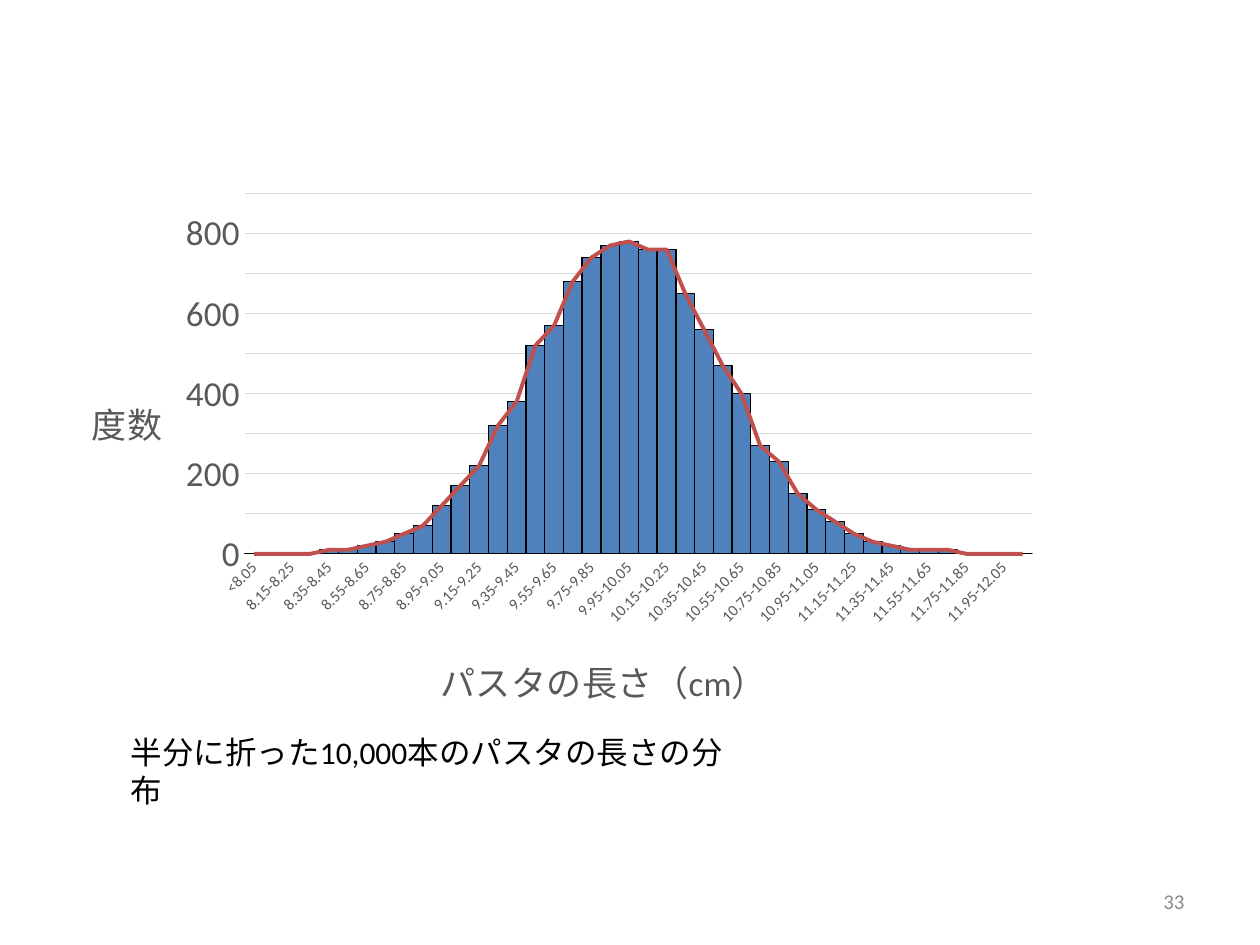
from pptx import Presentation
from pptx.chart.data import CategoryChartData
from pptx.dml.color import RGBColor
from pptx.enum.chart import XL_CHART_TYPE, XL_MARKER_STYLE, XL_TICK_MARK
from pptx.enum.text import MSO_ANCHOR, PP_ALIGN
from pptx.oxml import parse_xml
from pptx.oxml.ns import nsdecls, qn
from pptx.util import Inches, Pt

BLACK = RGBColor(0x00, 0x00, 0x00)
GRAY = RGBColor(0x59, 0x59, 0x59)
PALE = RGBColor(0xD9, 0xD9, 0xD9)
DIM = RGBColor(0x8C, 0x8C, 0x8C)
BLUE = RGBColor(0x4F, 0x81, 0xBD)
RED = RGBColor(0xC0, 0x50, 0x4D)
FACE = "Calibri"

COUNTS = [0, 0, 0, 0, 10, 10, 20, 30, 50, 70, 120, 170, 220, 320,
          380, 520, 570, 680, 740, 770, 780, 760, 760, 650, 560, 470, 400, 270,
          230, 150, 110, 80, 50, 30, 20, 10, 10, 10, 0, 0, 0, 0]


def bins():
    """Name the length classes, 0.1 cm wide, with an open class at each end."""
    edges = [f"{8.05 + i / 10:.2f}" for i in range(len(COUNTS) - 1)]
    inner = [f"{low}-{high}" for low, high in zip(edges, edges[1:])]
    return ["<" + edges[0], *inner, ">" + edges[-1]]


def style(item, **values):
    """Set each given format value on the item."""
    for name, value in values.items():
        setattr(item, name, value)


def paint(font, size, color):
    """Give a font its face, size and colour."""
    style(font, name=FACE, size=Pt(size), bold=False)
    font.color.rgb = color


def stroke(line, color, width):
    """Give a line its colour and width."""
    line.color.rgb = color
    line.width = Pt(width)


def place(node, index, box, inner=False):
    """Fix the layout of a chart part at fractions of the chart."""
    for old in node.findall(qn("c:layout")):
        node.remove(old)
    target = '<c:layoutTarget val="inner"/>' if inner else ""
    modes = '<c:xMode val="edge"/><c:yMode val="edge"/>'
    sizes = "".join(f'<c:{key} val="{value}"/>' for key, value in zip("xywh", box))
    node.insert(index, parse_xml(
        f'<c:layout {nsdecls("c")}><c:manualLayout>{target}{modes}{sizes}'
        "</c:manualLayout></c:layout>"))


def label(axis, text, spot):
    """Write a level axis title at the given spot."""
    frame = axis.axis_title.text_frame
    frame.text = text
    paint(frame.paragraphs[0].runs[0].font, 20, GRAY)
    body = frame._txBody.find(qn("a:bodyPr"))
    body.set("rot", "0")
    body.set("vert", "horz")
    place(axis.axis_title._element, 1, spot)


def overlay(chart):
    """Turn the second bar series into a line on the same axes."""
    bars = chart.plots[0]._element
    line = parse_xml(
        f'<c:lineChart {nsdecls("c")}><c:grouping val="standard"/>'
        '<c:varyColors val="0"/><c:marker val="1"/></c:lineChart>')
    curve = bars.findall(qn("c:ser"))[1]
    for flag in curve.findall(qn("c:invertIfNegative")):
        curve.remove(flag)
    line.insert(2, curve)
    for axis in bars.findall(qn("c:axId")):
        line.append(parse_xml(f'<c:axId {nsdecls("c")} val="{axis.get("val")}"/>'))
    bars.addnext(line)
    series = chart.plots[1].series[0]
    series.smooth = False
    series.marker.style = XL_MARKER_STYLE.NONE
    stroke(series.format.line, RED, 2.25)


def axes(chart):
    """Format both axes, their titles and the grid."""
    base, side = chart.category_axis, chart.value_axis
    for axis, size in ((base, 9), (side, 20)):
        style(axis, major_tick_mark=XL_TICK_MARK.NONE, minor_tick_mark=XL_TICK_MARK.NONE)
        paint(axis.tick_labels.font, size, GRAY)
    style(side, minimum_scale=0, maximum_scale=900, major_unit=100,
          has_major_gridlines=True)
    stroke(side.major_gridlines.format.line, PALE, 0.75)
    side.format.line.fill.background()
    stroke(base.format.line, PALE, 0.75)
    base._element.find(qn("c:txPr")).find(qn("a:bodyPr")).set("rot", "-2700000")
    skip = parse_xml(f'<c:tickLblSkip {nsdecls("c")} val="2"/>')
    base._element.find(qn("c:noMultiLvlLbl")).addprevious(skip)
    label(base, "パスタの長さ（cm）", (0.38, 0.86))
    label(side, "度数", (0.03, 0.38))


def histogram(slide, box):
    """Draw the bars and their outline curve in the box."""
    data = CategoryChartData(number_format="General")
    data.categories = bins()
    for name in ("Series 1", "Series 2"):
        data.add_series(name, COUNTS)
    chart = slide.shapes.add_chart(XL_CHART_TYPE.COLUMN_CLUSTERED, *box, data).chart
    style(chart, has_legend=False, has_title=False)
    paint(chart.font, 10, BLACK)
    overlay(chart)
    plot = chart.plots[0]
    style(plot, gap_width=0, vary_by_categories=False)
    look = plot.series[0].format
    look.fill.solid()
    look.fill.fore_color.rgb = BLUE
    stroke(look.line, BLACK, 0.75)
    axes(chart)
    area = plot._element.getparent()
    place(area, 0, (0.19, 0.02, 0.79, 0.67), inner=True)


def write(slide, box, text, size, color, align=PP_ALIGN.LEFT, anchor=MSO_ANCHOR.TOP):
    """Write one wrapped paragraph in the box."""
    frame = slide.shapes.add_textbox(*box).text_frame
    style(frame, word_wrap=True, vertical_anchor=anchor, text=text)
    para = frame.paragraphs[0]
    para.alignment = align
    paint(para.runs[0].font, size, color)


def rect(*sides):
    """Turn left, top, width and height into lengths."""
    return [Inches(side) for side in sides]


def main():
    """Build and save the slide."""
    deck = Presentation()
    style(deck, slide_width=Inches(10), slide_height=Inches(7.5))
    slide = deck.slides.add_slide(deck.slide_layouts[6])
    histogram(slide, rect(0.44, 1.45, 7.91, 4.27))
    write(slide, rect(0.94, 5.77, 4.97, 0.4),
          "半分に折った10,000本のパスタの長さの分布", 18, BLACK)
    write(slide, rect(7.17, 6.95, 2.33, 0.4), "33", 12, DIM,
          PP_ALIGN.RIGHT, MSO_ANCHOR.MIDDLE)
    deck.save("out.pptx")


if __name__ == "__main__":
    main()
